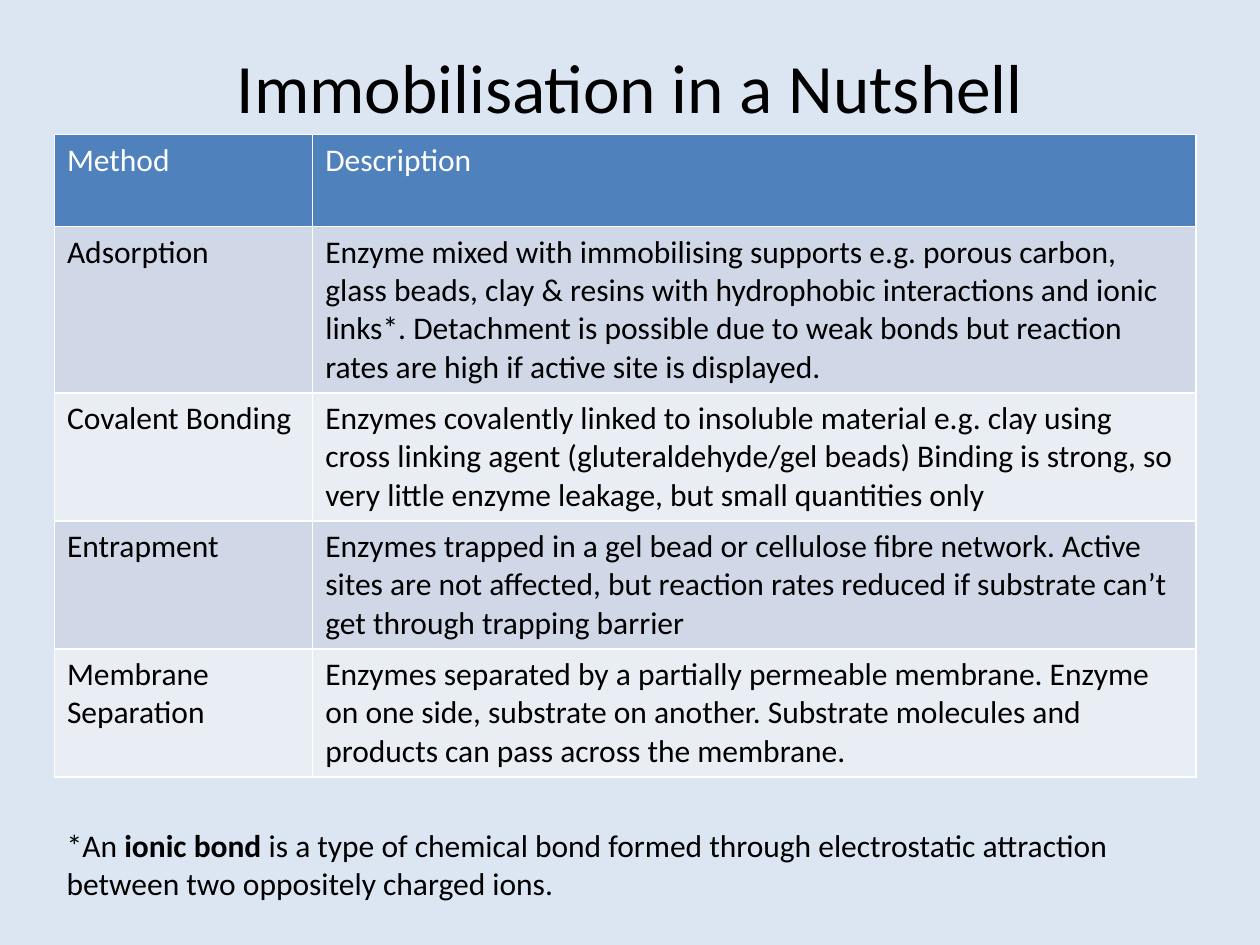
"""Build the slide summarising enzyme immobilisation methods."""
from dataclasses import dataclass

from lxml.etree import SubElement
from pptx import Presentation
from pptx.dml.color import RGBColor as Color
from pptx.enum.text import MSO_ANCHOR as Anchor, MSO_AUTO_SIZE as AutoSize, PP_ALIGN as Align
from pptx.oxml.ns import qn
from pptx.util import Pt


@dataclass(frozen=True)
class Theme:
    font: str = "Calibri"
    title_size: float = 39.6
    body_size: float = 18
    border_width: float = 1
    background: str = "DCE6F2"
    text: str = "000000"
    light: str = "FFFFFF"
    header: str = "4F81BD"
    bands: tuple[str, str] = ("D0D8E8", "E9EDF4")


@dataclass(frozen=True)
class Box:
    left: float
    top: float
    width: float
    height: float

    def lengths(self) -> list[Pt]:
        return [Pt(value) for value in (self.left, self.top, self.width, self.height)]


@dataclass(frozen=True)
class Row:
    method: str
    description: str
    height: float


THEME = Theme()
TITLE_BOX = Box(36, 21.6, 648, 55.4)
TABLE_BOX = Box(31.1, 77, 652.3, 367)
NOTE_BOX = Box(31, 468.7, 646.6, 51)
COLUMN_WIDTHS = (147.6, 504.7)
ROWS = (
    Row("Method", "Description", 52.6),
    Row("Adsorption", "Enzyme mixed with immobilising supports e.g. porous carbon, glass beads, "
        "clay & resins with hydrophobic interactions and ionic links*. Detachment is possible "
        "due to weak bonds but reaction rates are high if active site is displayed.", 95),
    Row("Covalent Bonding", "Enzymes covalently linked to insoluble material e.g. clay using "
        "cross linking agent (gluteraldehyde/gel beads) Binding is strong, so very little "
        "enzyme leakage, but small quantities only", 73.1),
    Row("Entrapment", "Enzymes trapped in a gel bead or cellulose fibre network. Active sites "
        "are not affected, but reaction rates reduced if substrate can’t get through "
        "trapping barrier", 73.1),
    Row("Membrane Separation", "Enzymes separated by a partially permeable membrane. Enzyme on "
        "one side, substrate on another. Substrate molecules and products can pass across "
        "the membrane.", 73.1),
)
NOTE = (
    ("*An ", False),
    ("ionic bond", True),
    (" is a type of chemical bond formed through electrostatic attraction between two "
     "oppositely charged ions.", False),
)


def apply(target, values: dict) -> None:
    for name, value in values.items():
        setattr(target, name, value)


def add_run(paragraph, text: str, color: str = THEME.text,
            size: float = THEME.body_size, bold: bool = False) -> None:
    run = paragraph.add_run()
    run.text = text
    apply(run.font, {"name": THEME.font, "size": Pt(size), "bold": bold})
    run.font.color.rgb = Color.from_string(color)


def add_borders(cell) -> None:
    properties = cell._tc.get_or_add_tcPr()
    for index, side in enumerate(("a:lnL", "a:lnR", "a:lnT", "a:lnB")):
        line = SubElement(properties, qn(side), w=str(Pt(THEME.border_width)))
        fill = SubElement(line, qn("a:solidFill"))
        SubElement(fill, qn("a:srgbClr"), val=THEME.light)
        properties.insert(index, line)


def draw_title(slide, text: str) -> None:
    title = slide.shapes.title
    apply(title, dict(zip(("left", "top", "width", "height"), TITLE_BOX.lengths())))
    apply(title.text_frame, {"auto_size": AutoSize.NONE, "word_wrap": True,
                             "vertical_anchor": Anchor.MIDDLE})
    paragraph = title.text_frame.paragraphs[0]
    paragraph.alignment = Align.CENTER
    add_run(paragraph, text, size=THEME.title_size)


def draw_cell(cell, text: str, fill: str, color: str) -> None:
    cell.fill.solid()
    cell.fill.fore_color.rgb = Color.from_string(fill)
    add_borders(cell)
    add_run(cell.text_frame.paragraphs[0], text, color)


def draw_table(slide, rows: tuple[Row, ...]) -> None:
    frame = slide.shapes.add_table(len(rows), len(COLUMN_WIDTHS), *TABLE_BOX.lengths())
    table = frame.table
    for column, width in zip(table.columns, COLUMN_WIDTHS):
        column.width = Pt(width)
    for index, row in enumerate(rows):
        table.rows[index].height = Pt(row.height)
        fill = THEME.bands[(index - 1) % 2] if index else THEME.header
        color = THEME.text if index else THEME.light
        for column, text in enumerate((row.method, row.description)):
            draw_cell(table.cell(index, column), text, fill, color)


def draw_note(slide, parts: tuple[tuple[str, bool], ...]) -> None:
    frame = slide.shapes.add_textbox(*NOTE_BOX.lengths()).text_frame
    apply(frame, {"word_wrap": True, "auto_size": AutoSize.SHAPE_TO_FIT_TEXT})
    for text, bold in parts:
        add_run(frame.paragraphs[0], text, bold=bold)


def main() -> None:
    presentation = Presentation()
    apply(presentation, {"slide_width": Pt(720), "slide_height": Pt(540)})
    slide = presentation.slides.add_slide(presentation.slide_layouts.get_by_name("Title Only"))
    slide.background.fill.solid()
    slide.background.fill.fore_color.rgb = Color.from_string(THEME.background)
    draw_title(slide, "Immobilisation in a Nutshell")
    draw_table(slide, ROWS)
    draw_note(slide, NOTE)
    presentation.save("out.pptx")


if __name__ == "__main__":
    main()
